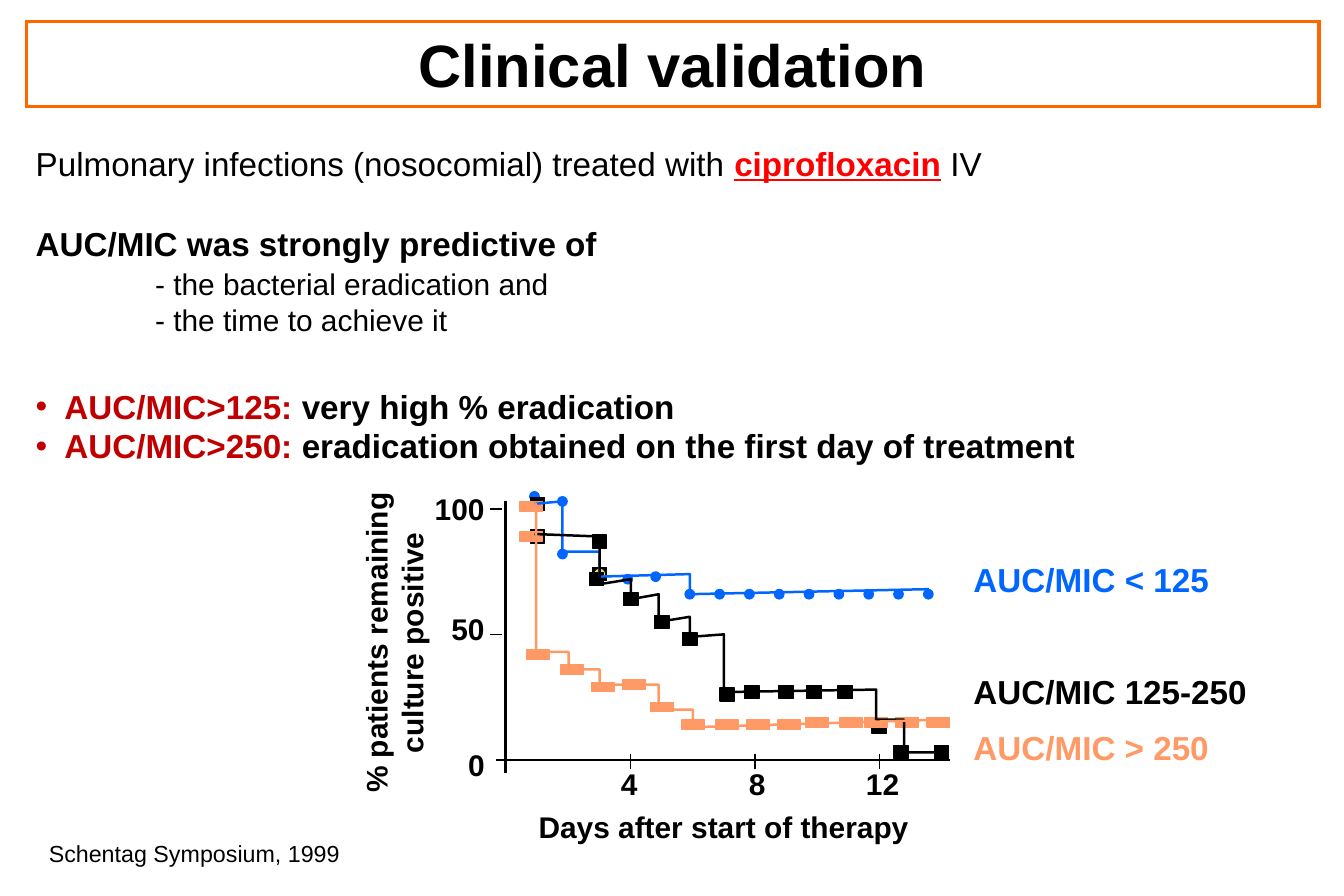
from lxml.etree import SubElement
from pptx import Presentation
from pptx.dml.color import RGBColor
from pptx.enum.shapes import MSO_CONNECTOR, MSO_SHAPE
from pptx.enum.text import MSO_ANCHOR, PP_ALIGN
from pptx.oxml.ns import qn
from pptx.util import Inches, Pt

COLORS = {
    "black": "000000", "white": "FFFFFF", "frame": "FF6600",
    "red": "FF0000", "dark red": "C00000", "yellow": "FBDF53",
    "blue": "0066FF", "peach": "FF9966",
}
RGB = {name: RGBColor.from_string(value) for name, value in COLORS.items()}

# Plot scale, in inches: where day 0 and 0 % lie, and the length of one unit
ORIGIN_X, DAY = 4.24, 0.26
ORIGIN_Y, PERCENT = 6.36, 0.021

prs = Presentation()
prs.slide_width, prs.slide_height = Inches(11.25), Inches(7.5)
shapes = prs.slides.add_slide(prs.slide_layouts[6]).shapes


def add_text(text, box=None, paragraph=None, wrap=False, align=PP_ALIGN.LEFT,
             size=18, color="black", bold=True, underline=False):
    """Add a run to the paragraph, or to a new text box at (left, top, width, height)."""
    label = None
    if paragraph is None:
        label = shapes.add_textbox(*map(Inches, box))
        label.text_frame.word_wrap = wrap
        paragraph = label.text_frame.paragraphs[0]
        paragraph.alignment = align
    run = paragraph.add_run()
    run.text = text
    run.font.name = "Arial"
    run.font.size = Pt(size)
    run.font.bold = bold
    run.font.underline = underline
    run.font.color.rgb = RGB[color]
    return label


def plot_position(day, percent):
    """Turn a data point into inches on the slide."""
    return ORIGIN_X + day * DAY, ORIGIN_Y - percent * PERCENT


# Findings: (space before, left indent, bulleted, runs)
plain, strong = {"size": 20, "bold": False}, {"size": 20}
sub_item = {"size": 18, "bold": False}
drug = {"size": 20, "color": "red", "underline": True}
threshold = {"size": 20, "color": "dark red"}
findings = [
    (0, 0, False, [("Pulmonary infections (nosocomial) treated with ", plain),
                   ("ciprofloxacin", drug), (" IV", plain)]),
    (24, 0, False, [("AUC/MIC was strongly predictive of", strong)]),
    (2, 1, False, [("- the bacterial eradication and", sub_item)]),
    (0, 1, False, [("- the time to achieve it", sub_item)]),
    (29, 0.24, True, [("AUC/MIC>125: ", threshold),
                      ("very high % eradication", strong)]),
    (0, 0.24, True, [("AUC/MIC>250: ", threshold),
                     ("eradication obtained on the first day of treatment", strong)]),
]
body = shapes.add_textbox(Inches(0.2), Inches(1.15), Inches(10.59), Inches(3.2)).text_frame
body.word_wrap = True
for index, (space, indent, bulleted, runs) in enumerate(findings):
    paragraph = body.add_paragraph() if index else body.paragraphs[0]
    paragraph.space_before = Pt(space)
    properties = paragraph._p.get_or_add_pPr()
    properties.set("marL", str(Inches(indent)))
    if bulleted:
        properties.set("indent", str(-Inches(indent)))
        SubElement(properties, qn("a:buFont")).set("typeface", "Arial")
        SubElement(properties, qn("a:buChar")).set("char", "•")
    for text, font in runs:
        add_text(text, paragraph=paragraph, **font)

# Axes, then one tick for each labelled day and percentage
axis_lines = [(4.23, 6.47, 4.23, 4.19, 1.5), (4.15, ORIGIN_Y, 7.95, ORIGIN_Y, 1.5)]
for day in (4, 8, 12):
    x, y = plot_position(day, 0)
    axis_lines.append((x, y - 0.05, x, y + 0.08, 0.75))
for percent in (50, 100):
    x, y = plot_position(0, percent)
    axis_lines.append((4.1, y, 4.2, y, 0.75))
for *ends, weight in axis_lines:
    axis = shapes.add_connector(MSO_CONNECTOR.STRAIGHT, *map(Inches, ends))
    axis.line.color.rgb = RGB["black"]
    axis.line.width = Pt(weight)
    SubElement(axis._element.spPr, qn("a:effectLst"))

# Markers, back to front: color, (preset, width, height), (day, % culture positive)
DOT = (MSO_SHAPE.OVAL, 0.08, 0.08)
SQUARE = (MSO_SHAPE.RECTANGLE, 0.12, 0.11)
BAR = (MSO_SHAPE.RECTANGLE, 0.19, 0.08)
observations = [
    ("black", SQUARE, [(3, 74)]),
    ("yellow", DOT, [(3, 74)]),
    ("blue", DOT, [(0.9, 105), (1.8, 103), (1.8, 82), (3.9, 72), (4.8, 73)]
     + [(5.9 + 0.96 * step, 66) for step in range(9)]),
    ("black", SQUARE, [(1, 102), (1, 89), (3, 87), (2.9, 72), (4, 64), (5, 55),
                       (5.9, 48), (7.1, 26)]
     + [(day, 27) for day in (7.9, 9, 9.9, 10.9)]
     + [(12, 13), (12.7, 3), (14, 3)]),
    ("peach", BAR, [(0.8, 89), (0.8, 101), (1, 42), (2.1, 36), (3.1, 29), (4.1, 30),
                    (5, 21)]
     + [(day, 14) for day in (6, 7.1, 8.1, 9.1)]
     + [(day, 15) for day in (10, 11.1, 11.9, 12.9, 13.9)]),
]
for color, (preset, width, height), points in observations:
    for day, percent in points:
        x, y = plot_position(day, percent)
        marker = shapes.add_shape(preset, Inches(x - width / 2), Inches(y - height / 2),
                                  Inches(width), Inches(height))
        marker.shadow.inherit = False
        marker.fill.solid()
        marker.fill.fore_color.rgb = RGB[color]
        marker.line.color.rgb = RGB[color]
        marker.line.width = Pt(0.75)

# Step curves: each plateau is (last day, % at its start, % at its end)
# and begins on the day the one before it ends
FIRST_DAY = 0.9
curves = {
    "blue": [(1.8, 102, 103), (3, 83, 83), (5.9, 73, 74), (13.6, 66, 68)],
    "black": [(3, 90, 89), (4, 70, 72), (4.9, 64, 66), (5.9, 55, 57), (7, 49, 50),
              (11.9, 27, 28), (12.8, 16, 16), (14, 3, 3)],
    "peach": [(0.95, 102, 102), (2, 43, 43), (3, 36, 36), (4.9, 30, 30), (6, 20, 20),
              (14, 13, 16)],
}
for color, plateaus in curves.items():
    corners, start_day = [], FIRST_DAY
    for end_day, start_percent, end_percent in plateaus:
        for day, percent in ((start_day, start_percent), (end_day, end_percent)):
            corners.append(tuple(map(Inches, plot_position(day, percent))))
        start_day = end_day
    builder = shapes.build_freeform(*corners[0])
    builder.add_line_segments(corners[1:], close=False)
    curve = builder.convert_to_shape()
    curve.shadow.inherit = False
    curve.fill.background()
    curve.line.color.rgb = RGB[color]
    curve.line.width = Pt(1.5)

# Axis labels: percentages end at one right edge, days are centred
for text, top in (("100", 4.06), ("50", 5.06), ("0", 6.2)):
    width = 0.2 + 0.14 * len(text)
    add_text(text, (4.16 - width, top, width, 0.4))
for text, center in (("4", 5.27), ("8", 6.34), ("12", 7.39)):
    width = 0.2 + 0.14 * len(text)
    add_text(text, (center - width / 2, 6.36, width, 0.4))
add_text("Days after start of therapy", (4.41, 6.72, 3.3, 0.4))
percent_title = add_text("% patients remaining culture positive", (1.91, 5.03, 2.77, 0.7),
                         wrap=True, align=PP_ALIGN.CENTER)
percent_title.rotation = 270

# Legend and citation
add_text("AUC/MIC < 125", (8.05, 4.63, 2.19, 0.44), size=20, color="blue")
add_text("AUC/MIC 125-250", (8.05, 5.57, 2.51, 0.44), size=20)
high_ratio = add_text("AUC/MIC > 250", (8.05, 6.04, 2.27, 0.44), size=20, color="peach")
high_ratio.fill.solid()
high_ratio.fill.fore_color.rgb = RGB["white"]
add_text("Schentag Symposium, 1999", (0.31, 6.98, 2.65, 0.34), size=14, bold=False)

heading = add_text("Clinical validation", (0.22, 0.18, 10.82, 0.71),
                   wrap=True, align=PP_ALIGN.CENTER, size=36)
heading.text_frame.vertical_anchor = MSO_ANCHOR.MIDDLE
heading.line.color.rgb = RGB["frame"]
heading.line.width = Pt(2)
SubElement(heading._element.spPr.find(qn("a:ln")), qn("a:miter")).set("lim", "800000")

prs.save("out.pptx")
